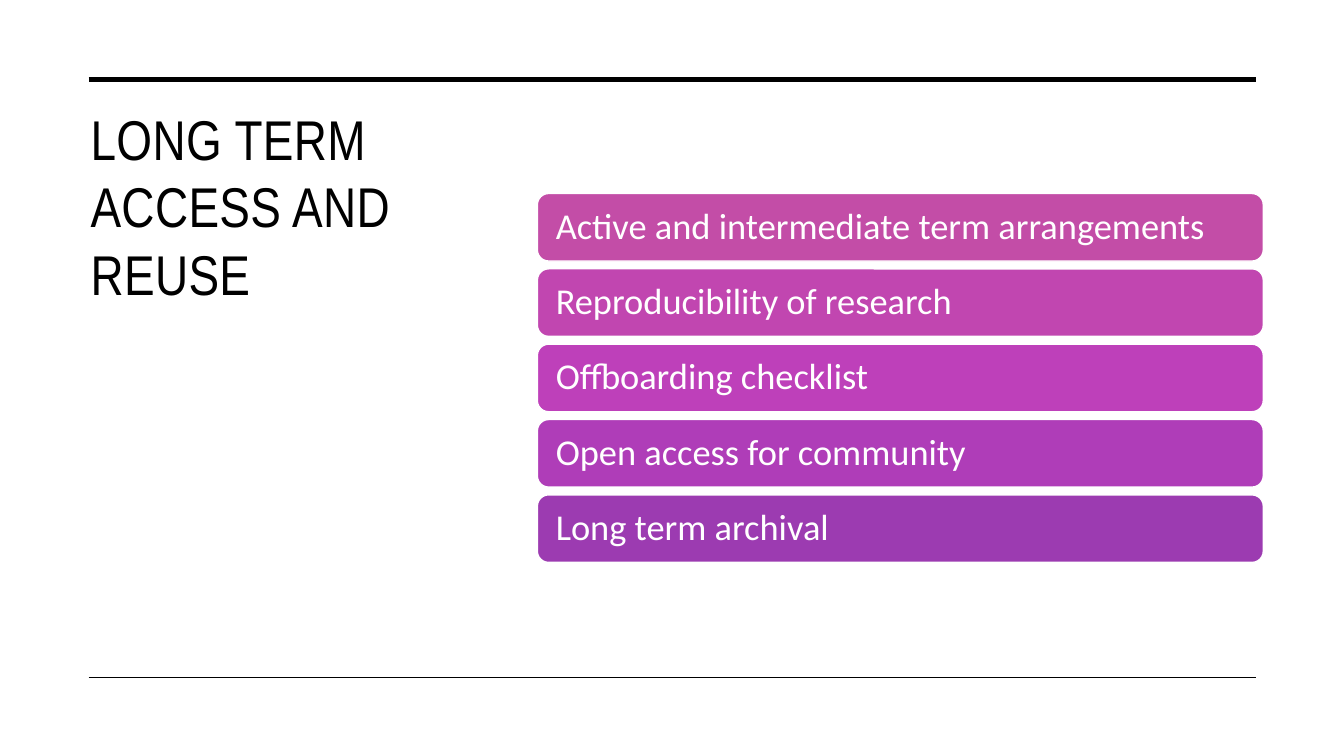
import pptx
import pptx.util
import pptx.dml.color
import pptx.enum.shapes
import pptx.enum.text
import pptx.oxml
import pptx.oxml.ns
from pptx.util import Inches

COLOURS = {
    "ink": "000000",
    "paper": "FFFFFF",
    "rose": "C34DA7",
    "pink": "C146B0",
    "magenta": "BE40BA",
    "orchid": "AF3DB8",
    "purple": "9C3BB1",
}
TOPICS = [
    ("Active and intermediate term arrangements", "rose"),
    ("Reproducibility of research", "pink"),
    ("Offboarding checklist", "magenta"),
    ("Open access for community", "orchid"),
    ("Long term archival", "purple"),
]
BAR_LEFT, BAR_TOP, BAR_WIDTH, BAR_HEIGHT = 5.33, 1.92, 7.2, 0.67
BAR_STEP = 0.7475
BAR_INSET = 0.15


def colour(name):
    return pptx.dml.color.RGBColor.from_string(COLOURS[name])


def write_text(frame, text, *, font, size, ink, anchor, line_spacing=1.0, tracking=None):
    frame.word_wrap = True
    frame.vertical_anchor = anchor
    para = frame.paragraphs[0]
    para.alignment = pptx.enum.text.PP_ALIGN.LEFT
    para.line_spacing = line_spacing
    span = para.add_run()
    span.text = text
    span.font.name = font
    span.font.size = pptx.util.Pt(size)
    span.font.color.rgb = colour(ink)
    if tracking is not None:
        span.font._element.set("spc", str(round(tracking * 100)))


def add_title(page, text):
    box = page.shapes.add_textbox(Inches(0.8), Inches(0.99), Inches(4), Inches(4.82))
    write_text(box.text_frame, text, font="Arial Narrow", size=40, ink="ink",
               anchor=pptx.enum.text.MSO_ANCHOR.TOP, tracking=0.3)


def add_rule(page, top, weight):
    rule = page.shapes.add_connector(
        pptx.enum.shapes.MSO_CONNECTOR.STRAIGHT,
        Inches(0.88), Inches(top), Inches(12.46), Inches(top))
    rule.line.color.rgb = colour("ink")
    rule.line.width = pptx.util.Pt(weight)
    properties = rule._element.spPr
    properties.append(pptx.oxml.parse_xml(
        f"<a:effectLst {pptx.oxml.ns.nsdecls('a')}/>"))


def add_topic_bar(page, top, text, fill):
    bar = page.shapes.add_shape(
        pptx.enum.shapes.MSO_SHAPE.ROUNDED_RECTANGLE,
        Inches(BAR_LEFT), Inches(top), Inches(BAR_WIDTH), Inches(BAR_HEIGHT))
    bar.shadow.inherit = False
    bar.fill.solid()
    bar.fill.fore_color.rgb = colour(fill)
    bar.line.color.rgb = colour("paper")
    bar.line.width = pptx.util.Pt(1)
    frame = bar.text_frame
    frame.margin_left = frame.margin_right = Inches(BAR_INSET)
    frame.margin_top = frame.margin_bottom = 0
    write_text(frame, text, font="Calibri", size=26, ink="paper",
               anchor=pptx.enum.text.MSO_ANCHOR.MIDDLE, line_spacing=0.9)


def main():
    deck = pptx.Presentation()
    deck.slide_width, deck.slide_height = Inches(13.33), Inches(7.5)
    page = deck.slides.add_slide(deck.slide_layouts[6])
    add_title(page, "LONG TERM ACCESS AND REUSE")
    add_rule(page, 0.79, 3.5)
    add_rule(page, 6.72, 1)
    for row, (text, fill) in enumerate(TOPICS):
        add_topic_bar(page, BAR_TOP + row * BAR_STEP, text, fill)
    deck.save("out.pptx")


if __name__ == "__main__":
    main()
